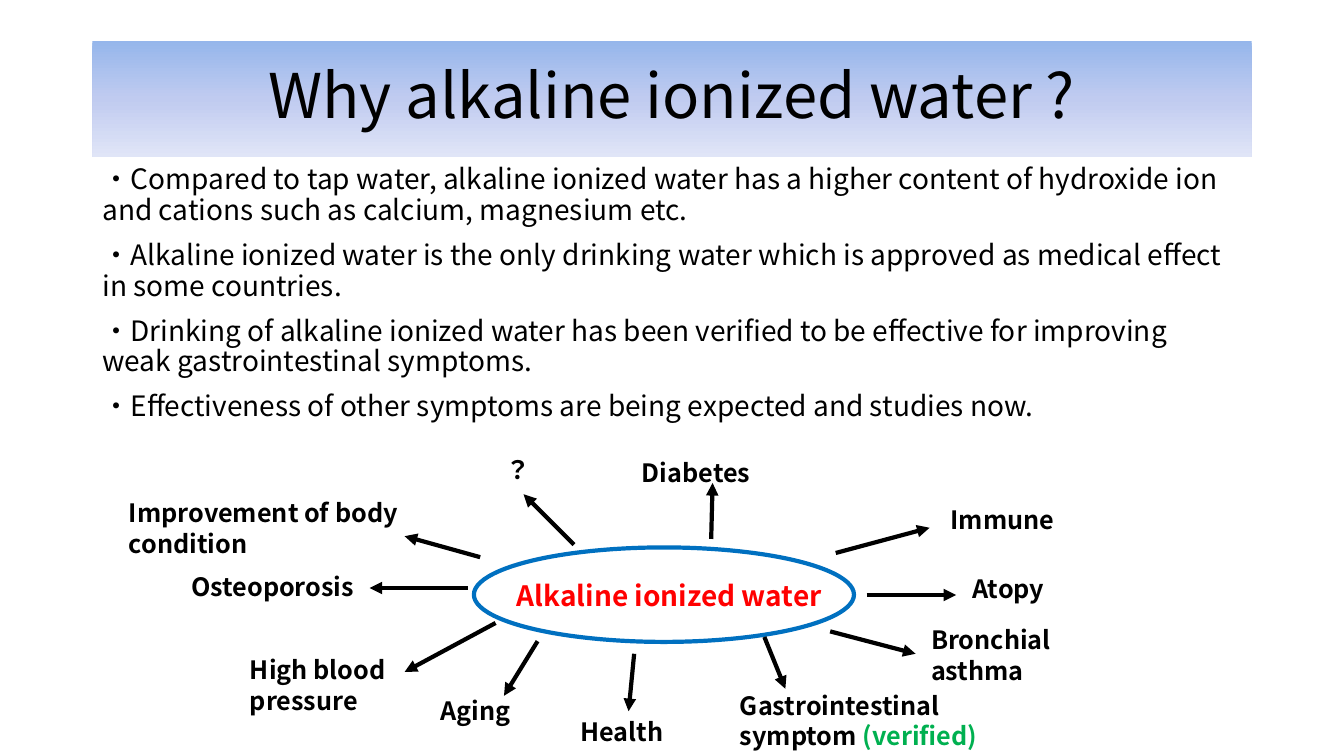
"""Build the slide on alkaline ionized water and its effects."""
from copy import deepcopy

from pptx import Presentation
from pptx.dml.color import RGBColor
from pptx.enum import shapes, text
from pptx.oxml import ns, xmlchemy
from pptx.util import Pt

FONT = "Noto Sans CJK JP"
BLACK, RED, GREEN, BLUE = "000000", "FF0000", "00B050", "0070C0"

TITLE = "Why alkaline ionized water ?"
TITLE_BOX = (66, 29, 828, 83)
TITLE_GRADIENT = [(0, "95B6EB"), (0.5, "C0CBF0"), (1, "E0E5F7")]

REASONS = [
    "・Compared to tap water, alkaline ionized water has a higher content of "
    "hydroxide ion and cations such as calcium, magnesium etc.",
    "・Alkaline ionized water is the only drinking water which is approved as "
    "medical effect in some countries.",
    "・Drinking of alkaline ionized water has been verified to be effective for "
    "improving weak gastrointestinal symptoms.",
    "・Effectiveness of other symptoms are being expected and studies now.",
]
REASONS_BOX = (66, 114, 828, 191)

HUB = "Alkaline ionized water"
HUB_BOX = (362, 409, 242, 32)
HUB_RING = (338.5, 391, 271.5, 67.5)

ONE_LINE, TWO_LINES = 30, 51
EFFECTS = [
    ([("Osteoporosis", BLACK)], (129.5, 404, 143, ONE_LINE), (334, 420, 264, 420)),
    ([("Atopy", BLACK)], (687.5, 405.5, 100, ONE_LINE), (619, 425, 683, 425)),
    ([("Bronchial asthma", BLACK)], (658, 442, 100, TWO_LINES), (593, 451, 654, 467)),
    ([("High blood pressure", BLACK)], (171.5, 463.5, 113, TWO_LINES), (354, 445, 289, 480)),
    ([("Improvement of body condition", BLACK)], (85, 351.5, 220, TWO_LINES), (343, 398, 289, 383)),
    ([("Immune", BLACK)], (672, 356.5, 100, ONE_LINE), (597, 395, 664, 377)),
    ([("Aging", BLACK)], (307.5, 492.5, 100, ONE_LINE), (384, 458, 360, 497)),
    ([("Gastrointestinal symptom ", BLACK), ("(verified)", GREEN)],
     (521.5, 489, 219, TWO_LINES), (546, 455, 561, 492)),
    ([("Health", BLACK)], (407.5, 507.5, 100, ONE_LINE), (453, 467, 449, 508)),
    ([("Diabetes", BLACK)], (451.5, 322.5, 100, ONE_LINE), (508, 385, 509, 345)),
    ([("？", BLACK)], (354, 320.5, 55, ONE_LINE), (410, 389, 374, 353)),
]


def rgb(color):
    return RGBColor.from_string(color)


def points(values):
    return [Pt(value) for value in values]


def add_child(parent, tag, **attributes):
    child = xmlchemy.OxmlElement(tag)
    for key, value in attributes.items():
        child.set(key, value)
    parent.append(child)


def place(shape, box):
    for side, value in zip(("left", "top", "width", "height"), points(box)):
        setattr(shape, side, value)


def write(paragraph, parts, size, bold=False, **layout):
    for key, value in layout.items():
        setattr(paragraph, key, value)
    for words, color in parts:
        run = paragraph.add_run()
        run.text = words
        for key, value in {"size": Pt(size), "bold": bold, "name": FONT}.items():
            setattr(run.font, key, value)
        run.font.color.rgb = rgb(color)
        add_child(run.font._element, "a:ea", typeface=FONT)


def add_label(slide, parts, box, size):
    label = slide.shapes.add_textbox(*points(box))
    label.text_frame.word_wrap = True
    label.text_frame.auto_size = text.MSO_AUTO_SIZE.SHAPE_TO_FIT_TEXT
    write(label.text_frame.paragraphs[0], parts, size, bold=True,
          line_spacing=Pt(size * 1.22))


def outline(line, color):
    line.color.rgb = rgb(color)
    line.width = Pt(3)


def add_arrow(slide, ends):
    arrow = slide.shapes.add_connector(shapes.MSO_CONNECTOR.STRAIGHT, *points(ends))
    outline(arrow.line, BLACK)
    properties = arrow._element.spPr
    add_child(properties.find(ns.qn("a:ln")), "a:tailEnd", type="triangle")
    add_child(properties, "a:effectLst")


def fill_title(title):
    place(title, TITLE_BOX)
    title.fill.gradient()
    title.fill.gradient_angle = 270
    stops = title._element.spPr.find(ns.qn("a:gradFill")).find(ns.qn("a:gsLst"))
    stops.insert(1, deepcopy(stops[0]))
    for stop, (position, color) in zip(title.fill.gradient_stops, TITLE_GRADIENT):
        stop.position = position
        stop.color.rgb = rgb(color)
    title.text_frame.auto_size = text.MSO_AUTO_SIZE.NONE
    title.text_frame.vertical_anchor = text.MSO_ANCHOR.MIDDLE
    write(title.text_frame.paragraphs[0], [(TITLE, BLACK)], 44,
          alignment=text.PP_ALIGN.CENTER, line_spacing=0.9)


def fill_reasons(body):
    place(body, REASONS_BOX)
    frame = body.text_frame
    frame.auto_size = text.MSO_AUTO_SIZE.NONE
    for index, reason in enumerate(REASONS):
        paragraph = frame.add_paragraph() if index else frame.paragraphs[0]
        properties = paragraph._p.get_or_add_pPr()
        for key in ("marL", "indent"):
            properties.set(key, "0")
        add_child(properties, "a:buNone")
        write(paragraph, [(reason, BLACK)], 20, line_spacing=Pt(22),
              space_before=Pt(10 if index else 0))


def main():
    deck = Presentation()
    deck.slide_width, deck.slide_height = points((960, 540))
    slide = deck.slides.add_slide(deck.slide_layouts[1])
    fill_title(slide.shapes.title)
    fill_reasons(slide.placeholders[1])

    add_label(slide, [(HUB, RED)], HUB_BOX, 20)
    ring = slide.shapes.add_shape(shapes.MSO_SHAPE.OVAL, *points(HUB_RING))
    ring.shadow.inherit = False
    ring.fill.background()
    outline(ring.line, BLUE)

    for parts, box, arrow_ends in EFFECTS:
        add_arrow(slide, arrow_ends)
        add_label(slide, parts, box, 18)
    deck.save("out.pptx")


if __name__ == "__main__":
    main()
